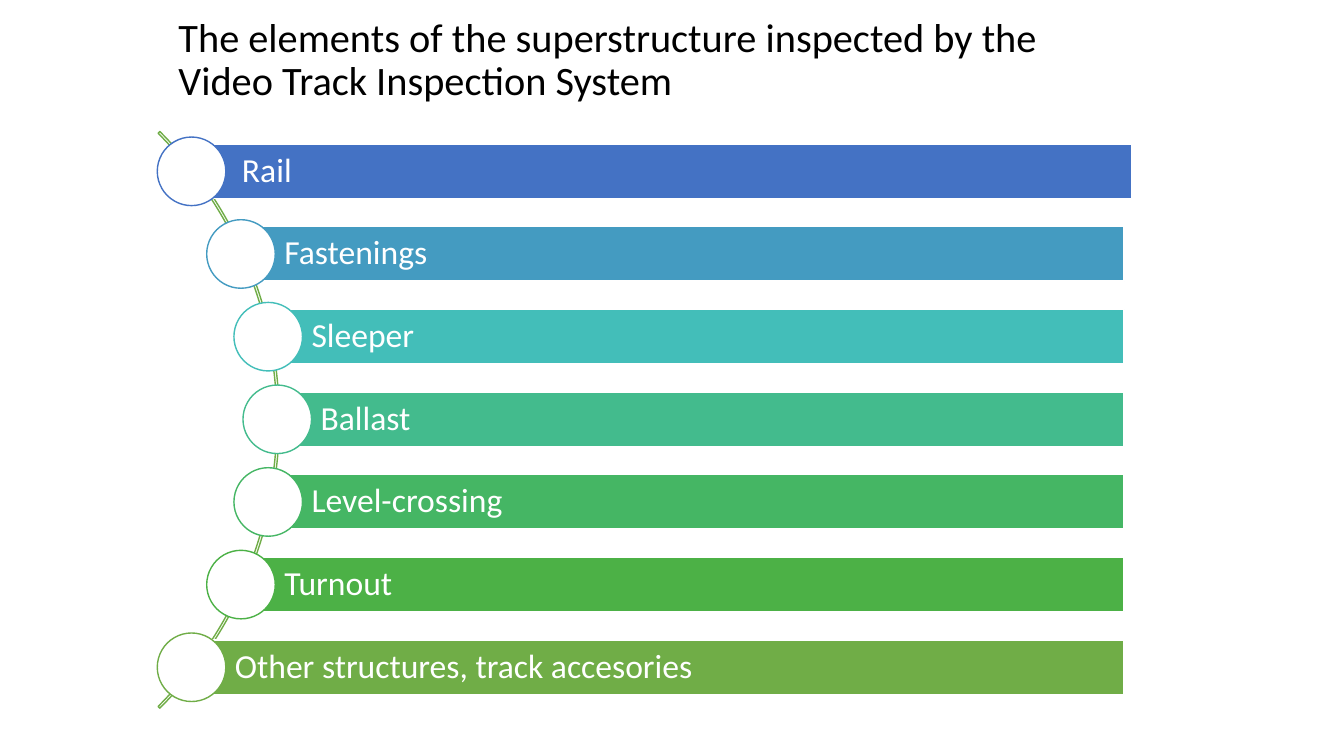
from pptx import Presentation
from pptx import util as u
from pptx.dml import color
from pptx.enum import shapes, text


def paint(shape, fill, line):
    shape.shadow.inherit = False
    if fill:
        shape.fill.solid()
        shape.fill.fore_color.rgb = color.RGBColor.from_string(fill)
    else:
        shape.fill.background()
    shape.line.color.rgb = color.RGBColor.from_string(line)
    shape.line.width = u.Pt(1)


def format_text(frame, wording, size, hex_color):
    frame.text = wording
    frame.word_wrap = True
    frame.auto_size = text.MSO_AUTO_SIZE.NONE
    frame.vertical_anchor = text.MSO_ANCHOR.MIDDLE
    paragraph = frame.paragraphs[0]
    paragraph.alignment = text.PP_ALIGN.LEFT
    paragraph.line_spacing = 0.9
    paragraph.font.name = "Calibri"
    paragraph.font.size = u.Pt(size)
    paragraph.font.color.rgb = color.RGBColor.from_string(hex_color)


presentation = Presentation()
presentation.slide_width = u.Inches(13.33)
presentation.slide_height = u.Inches(7.5)
slide = presentation.slides.add_slide(presentation.slide_layouts[5])

title = slide.shapes.title
title.left, title.top = u.Inches(1.67), u.Inches(0.13)
title.width, title.height = u.Inches(9.57), u.Inches(0.95)
format_text(
    title.text_frame,
    "The elements of the superstructure inspected by the Video Track Inspection System",
    28.8,
    "000000",
)

ELEMENTS = [
    ("Rail", "4472C4"),
    ("Fastenings", "449BC1"),
    ("Sleeper", "43BEB9"),
    ("Ballast", "43BB8D"),
    ("Level-crossing", "45B664"),
    ("Turnout", "4CB146"),
    ("Other structures, track accesories", "70AD47"),
]
CURVE = [2.75, 2.66, 2.39, 1.9]
MIDDLE_ROW = 3
FIRST_CENTER, ROW_PITCH = 1.7, 0.82
BAR_RIGHT, BAR_HEIGHT = 11.15, 0.54
CIRCLE = 0.68
RAIL_SHIFT = 0.07

diagram = slide.shapes.add_group_shape()
arc = diagram.shapes.add_shape(
    shapes.MSO_SHAPE.BLOCK_ARC,
    u.Inches(-5.32), u.Inches(0.12), u.Inches(8.09), u.Inches(8.09),
)
for index, value in enumerate([189, 27, 0.003]):
    arc.adjustments[index] = value
paint(arc, None, "70AD47")

for row, (name, hex_color) in enumerate(ELEMENTS):
    center_x = CURVE[abs(row - MIDDLE_ROW)]
    center_y = FIRST_CENTER + row * ROW_PITCH
    shift = RAIL_SHIFT if row == 0 else 0

    bar = diagram.shapes.add_shape(
        shapes.MSO_SHAPE.RECTANGLE,
        u.Inches(center_x + shift), u.Inches(center_y - BAR_HEIGHT / 2),
        u.Inches(BAR_RIGHT - center_x), u.Inches(BAR_HEIGHT),
    )
    paint(bar, hex_color, "FFFFFF")
    format_text(bar.text_frame, name, 24, "FFFFFF")
    bar.text_frame.margin_left = u.Inches(0.43)
    bar.text_frame.margin_right = u.Inches(0.07)
    bar.text_frame.margin_top = bar.text_frame.margin_bottom = u.Inches(0.07)

    circle = diagram.shapes.add_shape(
        shapes.MSO_SHAPE.OVAL,
        u.Inches(center_x - CIRCLE / 2), u.Inches(center_y - CIRCLE / 2),
        u.Inches(CIRCLE), u.Inches(CIRCLE),
    )
    paint(circle, "FFFFFF", hex_color)

presentation.save("out.pptx")
